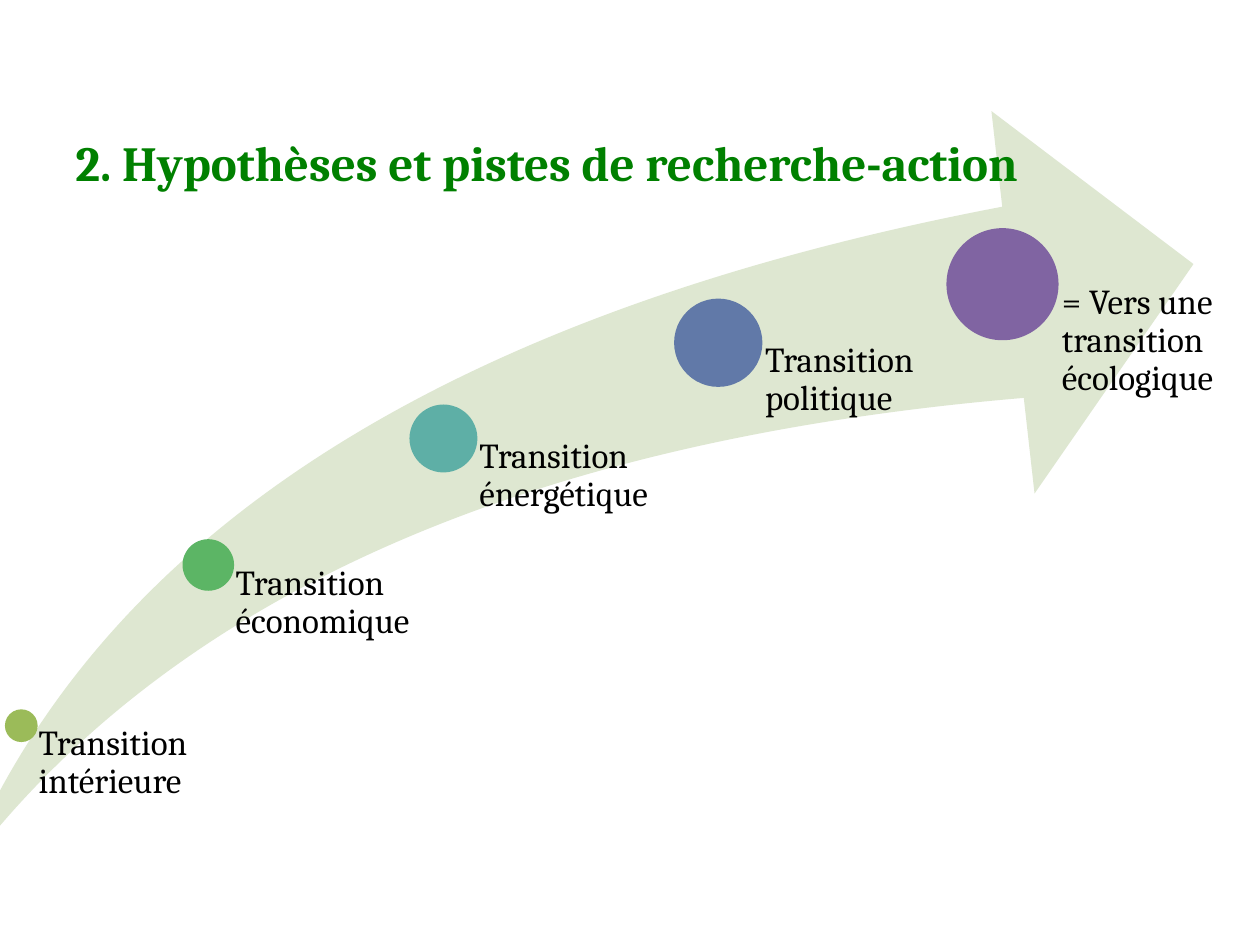
from pptx import Presentation
from pptx import util as u
from pptx.dml import color
from pptx.enum import shapes, text

COLOURS = {
    "arrow": "DEE7D1",
    "title": "008000",
    "label": "000000",
    "inner": "9BBB59",
    "economic": "5CB565",
    "energy": "5EAFA6",
    "political": "6179A8",
    "ecological": "8064A2",
}

# Centre x, centre y, dot diameter and label width in cm
STEPS = [
    ("Transition intérieure", "inner", 0.43, 14.63, 0.66, 3.76),
    ("Transition économique", "economic", 4.2, 11.39, 1.04, 4.75),
    ("Transition énergétique", "energy", 8.94, 8.84, 1.37, 5.54),
    ("Transition politique", "political", 14.48, 6.91, 1.78, 5.74),
    ("= Vers une transition écologique", "ecological", 20.21, 5.73, 2.26, 5.74),
]
LABEL_BOTTOM = 18.9
INSET_PER_DIAMETER = 0.53


class SlideBuilder:
    """Holds the style and the current slide; all lengths are in cm."""

    font_name = "Cambria"

    def __init__(self, slide):
        self.slide = slide

    def add_shape(self, kind, left, top, width, height, colour):
        shape = self.slide.shapes.add_shape(
            kind, u.Cm(left), u.Cm(top), u.Cm(width), u.Cm(height))
        shape.shadow.inherit = False
        shape.fill.solid()
        shape.fill.fore_color.rgb = color.RGBColor.from_string(COLOURS[colour])
        shape.line.fill.background()
        return shape

    def add_text(self, words, left, top, width, height, size, colour,
                 insets, bold=False, line_spacing=1.0):
        """Add a top-anchored text box; insets are left, top, right, bottom."""
        box = self.slide.shapes.add_textbox(
            u.Cm(left), u.Cm(top), u.Cm(width), u.Cm(height))
        frame = box.text_frame
        frame.word_wrap = True
        frame.vertical_anchor = text.MSO_ANCHOR.TOP
        (frame.margin_left, frame.margin_top,
         frame.margin_right, frame.margin_bottom) = map(u.Cm, insets)
        frame.text = words
        paragraph = frame.paragraphs[0]
        paragraph.alignment = text.PP_ALIGN.LEFT
        paragraph.line_spacing = line_spacing
        font = paragraph.runs[0].font
        font.name = self.font_name
        font.size = u.Pt(size)
        font.bold = bold
        font.color.rgb = color.RGBColor.from_string(COLOURS[colour])

    def add_step(self, words, colour, x, y, diameter, label_width):
        """Add a dot and its label, whose box starts at the dot's centre."""
        self.add_shape(shapes.MSO_SHAPE.OVAL, x - diameter / 2,
                       y - diameter / 2, diameter, diameter, colour)
        self.add_text(words, x, y, label_width, LABEL_BOTTOM - y, 20, "label",
                      (INSET_PER_DIAMETER * diameter, 0, 0, 0),
                      line_spacing=0.9)


def main():
    presentation = Presentation()
    presentation.slide_width = u.Cm(25.4)
    presentation.slide_height = u.Cm(19.05)
    slide = presentation.slides.add_slide(presentation.slide_layouts[6])
    builder = SlideBuilder(slide)

    arrow = builder.add_shape(shapes.MSO_SHAPE.SWOOSH_ARROW,
                              -0.81, 2.24, 24.87, 15.42, "arrow")
    arrow.adjustments[0] = 0.25
    arrow.adjustments[1] = 0.25
    for step in STEPS:
        builder.add_step(*step)
    builder.add_text("2. Hypothèses et pistes de recherche-action",
                     1.27, 2.54, 22.86, 2.54, 28, "title",
                     (0.25, 0.13, 0.25, 0.13), bold=True)
    presentation.save("out.pptx")


if __name__ == "__main__":
    main()
